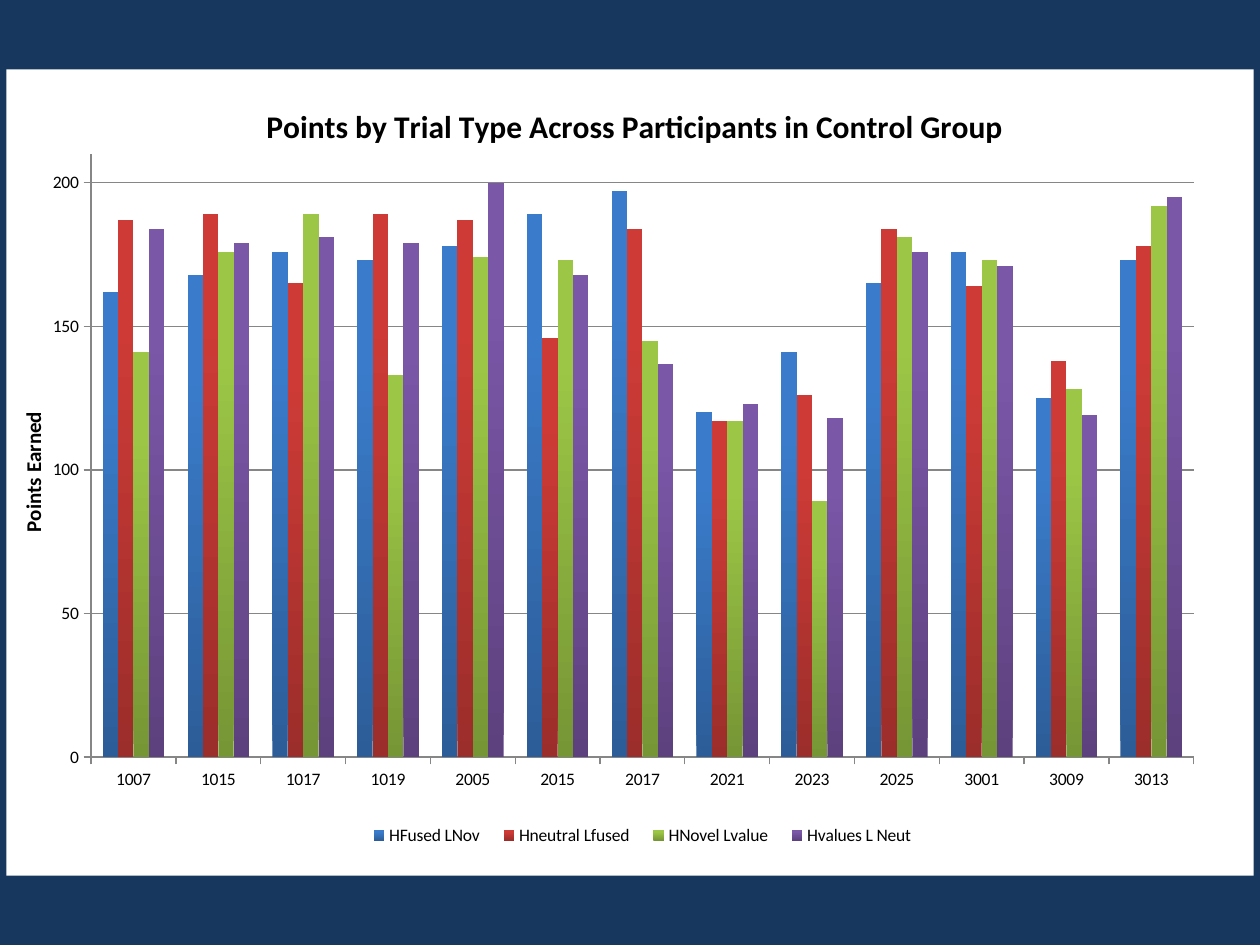
"""Build a slide with a clustered column chart of points by trial type."""
import lxml.etree
import pptx
import pptx.chart.data
import pptx.dml.color
import pptx.enum.chart
import pptx.oxml
import pptx.oxml.ns
import pptx.util

TITLE = "Points by Trial Type Across Participants in Control Group"
AXIS_TITLE = "Points Earned"
PARTICIPANTS = ["1007", "1015", "1017", "1019", "2005", "2015", "2017",
                "2021", "2023", "2025", "3001", "3009", "3013"]
TRIAL_TYPES = {
    "HFused LNov": [162, 168, 176, 173, 178, 189, 197, 120, 141, 165, 176, 125, 173],
    "Hneutral Lfused": [187, 189, 165, 189, 187, 146, 184, 117, 126, 184, 164, 138, 178],
    "HNovel Lvalue": [141, 176, 189, 133, 174, 173, 145, 117, 89, 181, 173, 128, 192],
    "Hvalues L Neut": [184, 179, 181, 179, 200, 168, 137, 123, 118, 176, 171, 119, 195],
}
THEME = {
    "font": "Calibri", "text": "000000", "background": "17375E", "panel": "FFFFFF",
    "line": "868686", "title": 18, "axis_title": 12, "body": 10,
    "gradients": [("2C5D98", "3A7CCB"), ("9B2D2A", "CE3B37"),
                  ("769535", "9CC746"), ("5D417E", "7B57A8")],
}
LAYOUTS = {
    "plot": {"layoutTarget": "inner", "xMode": "edge", "yMode": "edge",
             "x": 0.068, "y": 0.105, "w": 0.884, "h": 0.748},
    "title": {"xMode": "edge", "yMode": "edge", "x": 0.204, "y": 0.037},
    "axis_title": {"xMode": "edge", "yMode": "edge", "x": 0.007, "y": 0.42},
    "legend": {"xMode": "edge", "yMode": "edge",
               "x": 0.28, "y": 0.93, "w": 0.46, "h": 0.04},
}


def color(name):
    return pptx.dml.color.RGBColor.from_string(THEME.get(name, name))


def set_font(font, size, bold=False):
    font.name = THEME["font"]
    font.size = pptx.util.Pt(THEME[size])
    font.bold = bold
    font.color.rgb = color("text")


def set_layout(element, values, after=None):
    tag = pptx.oxml.ns.qn
    for old in element.findall(tag("c:layout")):
        element.remove(old)
    layout = lxml.etree.Element(tag("c:layout"))
    manual = lxml.etree.SubElement(layout, tag("c:manualLayout"))
    for name, value in values.items():
        lxml.etree.SubElement(manual, tag(f"c:{name}")).set("val", str(value))
    if after:
        element.find(tag(after)).addnext(layout)
    else:
        element.insert(0, layout)


def write_title(title, text, size):
    paragraph = title.text_frame.paragraphs[0]
    run = paragraph.add_run()
    run.text = text
    set_font(run.font, size, True)
    set_layout(title._element, LAYOUTS[size], "c:tx")


def format_axis(axis):
    axis.major_tick_mark = pptx.enum.chart.XL_TICK_MARK.OUTSIDE
    axis.minor_tick_mark = pptx.enum.chart.XL_TICK_MARK.NONE
    set_font(axis.tick_labels.font, "body")
    axis.format.line.color.rgb = color("line")
    axis.format.line.width = pptx.util.Pt(0.75)


def fill_panel(chart):
    namespaces = pptx.oxml.ns.nsdecls("c", "a")
    panel = pptx.oxml.parse_xml(
        f'<c:spPr {namespaces}><a:solidFill><a:srgbClr val="{THEME["panel"]}"/>'
        '</a:solidFill><a:ln><a:noFill/></a:ln></c:spPr>')
    chart._chartSpace.find(pptx.oxml.ns.qn("c:chart")).addnext(panel)


def add_points_chart(slide):
    data = pptx.chart.data.CategoryChartData()
    data.categories = PARTICIPANTS
    for name, values in TRIAL_TYPES.items():
        data.add_series(name, values)
    area = [pptx.util.Inches(length) for length in (0.05, 0.55, 9.9, 6.4)]
    chart = slide.shapes.add_chart(
        pptx.enum.chart.XL_CHART_TYPE.COLUMN_CLUSTERED, *area, data).chart
    set_font(chart.font, "body")
    fill_panel(chart)
    write_title(chart.chart_title, TITLE, "title")

    plot = chart.plots[0]
    plot.gap_width, plot.overlap, plot.vary_by_categories = 150, 0, False
    for series, shades in zip(plot.series, THEME["gradients"]):
        fill = series.format.fill
        fill.gradient()
        fill.gradient_angle = 90
        for stop, shade, position in zip(fill.gradient_stops, shades, (0, 0.8)):
            stop.color.rgb = color(shade)
            stop.position = position
    set_layout(chart._chartSpace.chart.plotArea, LAYOUTS["plot"])

    format_axis(chart.category_axis)
    value_axis = chart.value_axis
    format_axis(value_axis)
    value_axis.minimum_scale, value_axis.maximum_scale = 0, 210
    value_axis.major_unit = 50
    gridline = value_axis.major_gridlines.format.line
    gridline.color.rgb = color("line")
    gridline.width = pptx.util.Pt(0.75)
    write_title(value_axis.axis_title, AXIS_TITLE, "axis_title")
    body = value_axis.axis_title.text_frame._txBody.bodyPr
    body.set("rot", "-5400000")
    body.set("vert", "horz")

    chart.has_legend = True
    legend = chart.legend
    legend.position = pptx.enum.chart.XL_LEGEND_POSITION.BOTTOM
    legend.include_in_layout = False
    set_font(legend.font, "body")
    set_layout(legend._element, LAYOUTS["legend"], "c:legendPos")


def main():
    presentation = pptx.Presentation()
    presentation.slide_width = pptx.util.Inches(10)
    presentation.slide_height = pptx.util.Inches(7.5)
    slide = presentation.slides.add_slide(presentation.slide_layouts[6])
    background = slide.background.fill
    background.solid()
    background.fore_color.rgb = color("background")
    add_points_chart(slide)
    presentation.save("out.pptx")


if __name__ == "__main__":
    main()
